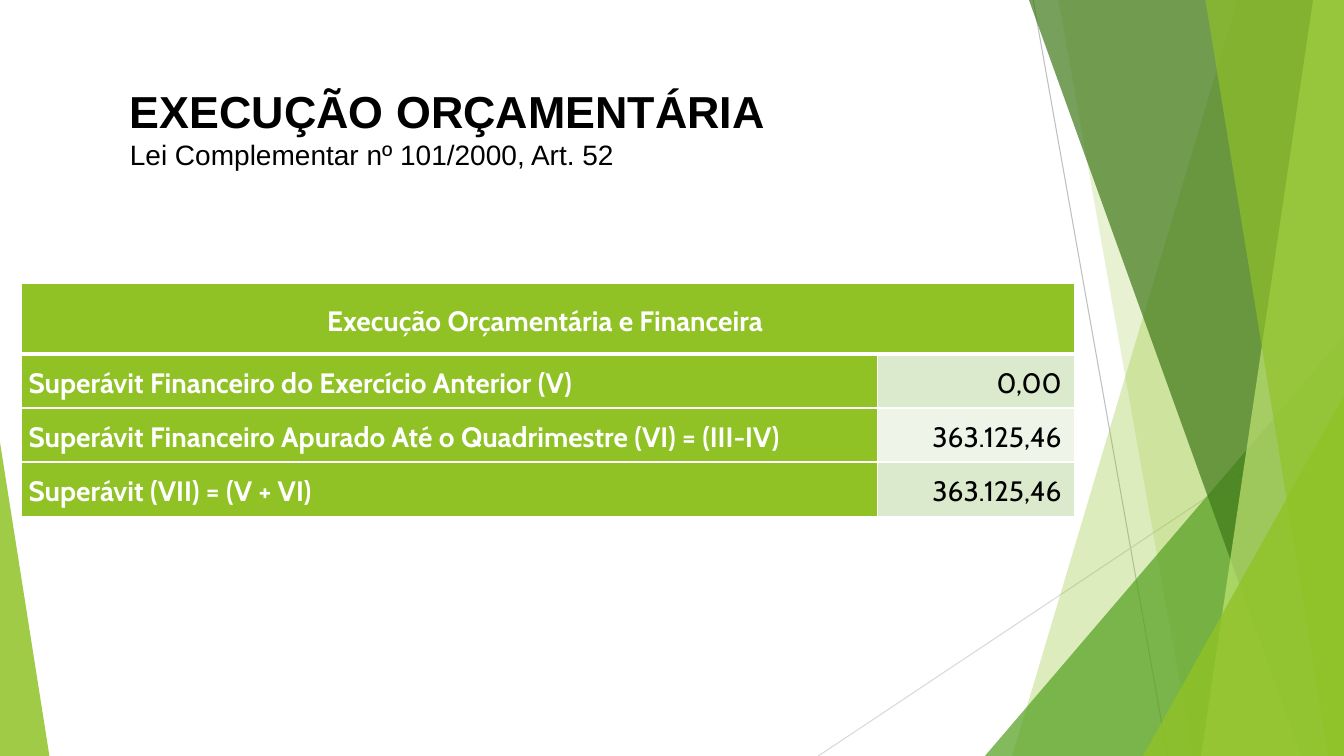
from lxml.etree import SubElement as Sub
from pptx import Presentation
from pptx.dml.color import RGBColor as RGB
from pptx.enum.shapes import MSO_CONNECTOR as Conn, MSO_SHAPE as Shape
from pptx.enum.text import MSO_ANCHOR as Anchor, PP_ALIGN as Align
from pptx.oxml import parse_xml
from pptx.oxml.ns import nsdecls, qn
from pptx.util import Pt

# Content
TITLE = [
    ("EXECUÇÃO ORÇAMENTÁRIA", 32, True),
    ("Lei Complementar nº 101/2000, Art. 52", 20, False),
]
HEAD = "Execução Orçamentária e Financeira "
ROWS = [
    ("Superávit Financeiro do Exercício Anterior (V)", "0,00 "),
    ("Superávit Financeiro Apurado Até o Quadrimestre (VI) = (III-IV)", "363.125,46 "),
    ("Superávit (VII) = (V + VI)", "363.125,46 "),
]

# Look
W, H = 960, 540
HUES = {
    "lime": "90C226", "green": "54A021", "forest": "3F7819", "pale": "C0E474",
    "band1": "DBE9CD", "band2": "EEF4E8", "white": "FFFFFF", "black": "000000",
    "gray": "BFBFBF", "silver": "D9D9D9",
}
LINES = [((738, 0), (834, H), "gray"), ((W, 290), (584.5, H), "silver")]
# Slabs run from a slanted left side to the right edge: top x, foot x
# Wedges are right triangles: left, top, width, apex place
FACETS = [
    ("slab", (884, 723), "lime", 30),
    ("slab", (756, 852), "lime", 20),
    ("wedge", (703.5, 240, 256.5, 1), "green", 72),
    ("slab", (735, 929.5), "forest", 70),
    ("slab", (938, 858), "pale", 70),
    ("slab", (861, 949), "lime", 65),
    ("wedge", (816.5, 283, 143.5, 1), "lime", 80),
    ("wedge", (0, 316, 35.3, 0), "lime", 85),
]
LEFT, TOP = 15.4, 202.5
COLS = [611.5, 141]
HIGH, LOW = 50.4, 38.6


def hue(name):
    return RGB.from_string(HUES[name])


def paint(shape, name, alpha):
    shape.shadow.inherit = False
    shape.line.fill.background()
    shape.fill.solid()
    shape.fill.fore_color.rgb = hue(name)
    tint = shape.fill._xPr.find(qn("a:solidFill"))[0]
    Sub(tint, qn("a:alpha")).set("val", str(alpha * 1000))


def write(para, text, size, font, name, bold):
    run = para.add_run()
    run.text = text
    run.font.size, run.font.name, run.font.bold = Pt(size), font, bold
    run.font.color.rgb = hue(name)


def edge(cell, foot):
    props = cell._tc.get_or_add_tcPr()
    for i, side in enumerate("LRTB"):
        wide = Pt(foot if side == "B" else 1)
        props.insert(i, parse_xml(
            f'<a:ln{side} {nsdecls("a")} w="{wide}"><a:solidFill>'
            f'<a:srgbClr val="{HUES["white"]}"/></a:solidFill></a:ln{side}>'))


def fill(cell, text, back, ink, bold, align, foot=1):
    cell.fill.solid()
    cell.fill.fore_color.rgb = hue(back)
    cell.vertical_anchor = Anchor.MIDDLE
    cell.margin_left = cell.margin_right = Pt(5)
    cell.margin_top = cell.margin_bottom = Pt(0.7)
    para = cell.text_frame.paragraphs[0]
    para.alignment, para.line_spacing = align, 1.15
    if text:
        write(para, text, 20, "Cabin", ink, bold)
    edge(cell, foot)


deck = Presentation()
deck.slide_width, deck.slide_height = Pt(W), Pt(H)
shapes = deck.slides.add_slide(deck.slide_layouts[6]).shapes

# Thin lines
for start, end, name in LINES:
    line = shapes.add_connector(Conn.STRAIGHT, *map(Pt, start + end))
    line.line.color.rgb = hue(name)
    line.line.width = Pt(0.75)
    Sub(line._element.spPr, qn("a:effectLst"))

# Green facets
for kind, spot, name, alpha in FACETS:
    if kind == "slab":
        head, foot = spot
        pen = shapes.build_freeform(Pt(head), 0)
        pen.add_line_segments([(Pt(x), Pt(y)) for x, y in ((W, 0), (W, H), (foot, H))])
        facet = pen.convert_to_shape()
    else:
        x, y, wide, apex = spot
        facet = shapes.add_shape(Shape.ISOSCELES_TRIANGLE, Pt(x), Pt(y), Pt(wide), Pt(H - y))
        facet.adjustments[0] = apex
    paint(facet, name, alpha)

# Table
size = (sum(COLS), HIGH + LOW * len(ROWS))
grid = shapes.add_table(len(ROWS) + 1, 2, *map(Pt, (LEFT, TOP) + size)).table
grid.first_row = grid.horz_banding = False
for col, wide in zip(grid.columns, COLS):
    col.width = Pt(wide)
for i, row in enumerate(grid.rows):
    row.height = Pt(LOW if i else HIGH)
for c, text in enumerate((HEAD, "")):
    fill(grid.cell(0, c), text, "lime", "white", True, Align.CENTER, 3)
grid.cell(0, 0).merge(grid.cell(0, 1))
for r, (label, value) in enumerate(ROWS, 1):
    fill(grid.cell(r, 0), label, "lime", "white", True, Align.LEFT)
    fill(grid.cell(r, 1), value, "band1" if r % 2 else "band2", "black", False, Align.RIGHT)

# Title
box = shapes.add_textbox(Pt(85.7), Pt(56.5), Pt(560), Pt(67)).text_frame
box.word_wrap = True
for i, (text, pts, bold) in enumerate(TITLE):
    para = box.add_paragraph() if i else box.paragraphs[0]
    write(para, text, pts, "Arial", "black", bold)

deck.save("out.pptx")
